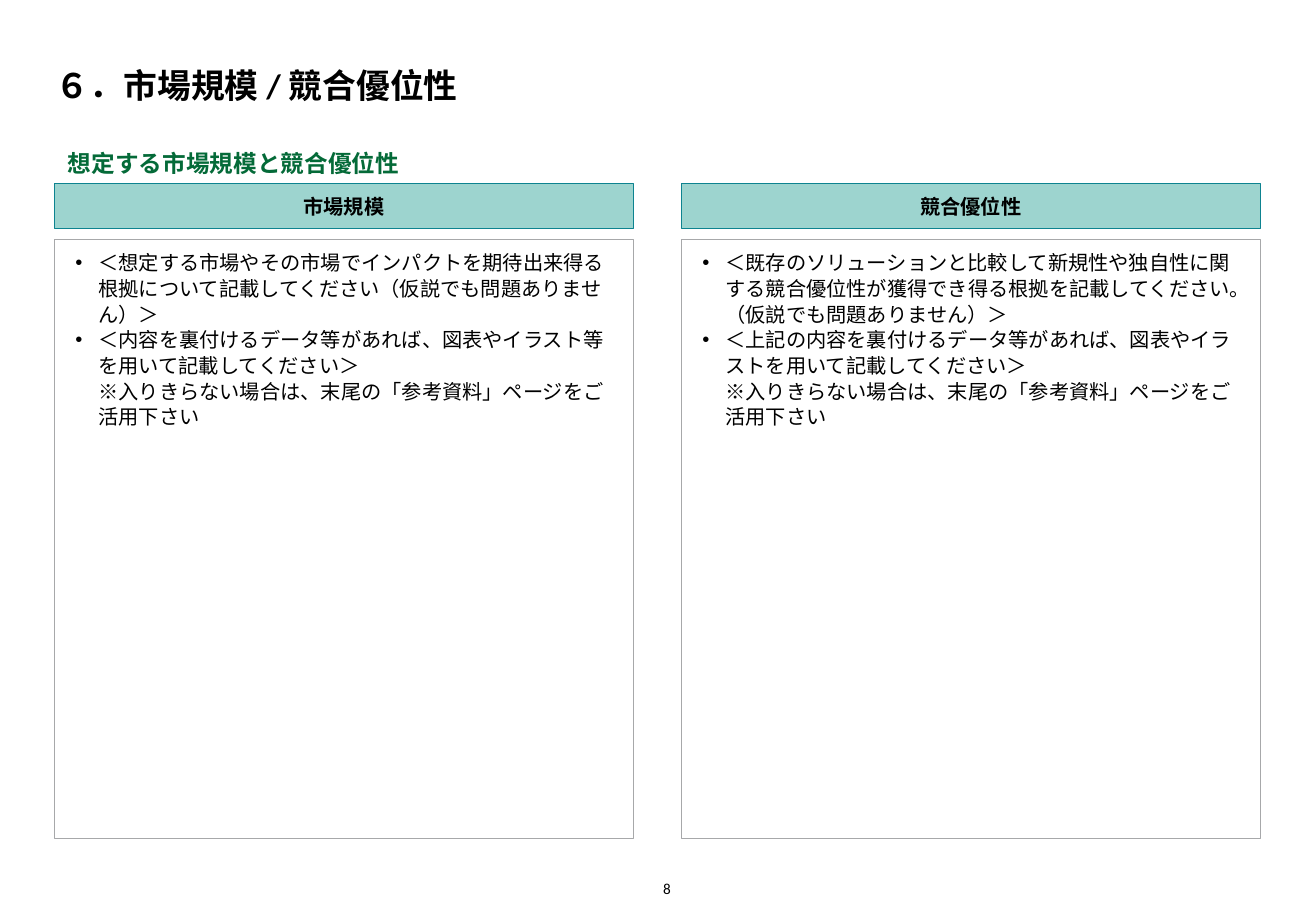
"""Build the market size and competitive advantage slide."""
import pptx
import pptx.dml.color
import pptx.enum.shapes
import pptx.enum.text
import pptx.oxml.ns
import pptx.util
from lxml import etree
from pptx.util import Inches

COLORS = {
    "black": "000000",
    "white": "FFFFFF",
    "green": "046A38",
    "header": "9DD4CF",
    "header_line": "0D8390",
    "panel_line": "A7A8AA",
}
ALIGN = pptx.enum.text.PP_ALIGN
ANCHOR = pptx.enum.text.MSO_ANCHOR
REFERENCE_NOTE = "※入りきらない場合は、末尾の「参考資料」ページをご活用下さい"
COLUMNS = [
    (0.45, "市場規模", [
        "＜想定する市場やその市場でインパクトを期待出来得る根拠について記載してください（仮説でも問題ありません）＞",
        "＜内容を裏付けるデータ等があれば、図表やイラスト等を用いて記載してください＞\n" + REFERENCE_NOTE,
    ]),
    (5.61, "競合優位性", [
        "＜既存のソリューションと比較して新規性や独自性に関する競合優位性が獲得でき得る根拠を記載してください。（仮説でも問題ありません）＞",
        "＜上記の内容を裏付けるデータ等があれば、図表やイラストを用いて記載してください＞\n" + REFERENCE_NOTE,
    ]),
]
COLUMN_WIDTH = 4.76


def rgb(name):
    return pptx.dml.color.RGBColor.from_string(COLORS[name])


def set_frame(shape, anchor, inset):
    frame = shape.text_frame
    frame.word_wrap = True
    frame.vertical_anchor = anchor
    frame.margin_left = frame.margin_right = Inches(inset)
    frame.margin_top = frame.margin_bottom = Inches(inset)
    return frame


def write(paragraph, text, size, font, color="black", bold=False, align=ALIGN.LEFT):
    paragraph.text = text
    paragraph.alignment = align
    for run in paragraph.runs:
        run.font.size = pptx.util.Pt(size)
        run.font.name = font
        run.font.bold = bold
        run.font.color.rgb = rgb(color)
    for line_break in paragraph._p.findall(pptx.oxml.ns.qn("a:br")):
        etree.SubElement(line_break, pptx.oxml.ns.qn("a:rPr"), sz=str(size * 100))


def add_label(slide, box, text, size, anchor, inset=0, **style):
    shape = slide.shapes.add_textbox(*map(Inches, box))
    frame = set_frame(shape, anchor, inset)
    write(frame.paragraphs[0], text, size, "Calibri", **style)


def add_box(slide, box, fill, line, anchor):
    shape = slide.shapes.add_shape(
        pptx.enum.shapes.MSO_SHAPE.RECTANGLE, *map(Inches, box))
    shape.shadow.inherit = False
    shape.fill.solid()
    shape.fill.fore_color.rgb = rgb(fill)
    shape.line.color.rgb = rgb(line)
    shape.line.width = pptx.util.Pt(0.5)
    return set_frame(shape, anchor, 0.08)


def add_bullet(paragraph):
    properties = paragraph._p.get_or_add_pPr()
    properties.set("marL", str(Inches(0.28)))
    properties.set("indent", str(Inches(-0.19)))
    etree.SubElement(properties, pptx.oxml.ns.qn("a:buFont"), typeface="Arial")
    etree.SubElement(properties, pptx.oxml.ns.qn("a:buChar"), char="•")


def add_column(slide, left, heading, items):
    panel = add_box(slide, (left, 1.97, COLUMN_WIDTH, 4.93),
                    "white", "panel_line", ANCHOR.TOP)
    for index, item in enumerate(items):
        paragraph = panel.add_paragraph() if index else panel.paragraphs[0]
        add_bullet(paragraph)
        paragraph.line_spacing = 1.06
        write(paragraph, item, 12, "Arial")
    header = add_box(slide, (left, 1.51, COLUMN_WIDTH, 0.37),
                     "header", "header_line", ANCHOR.MIDDLE)
    header.paragraphs[0].line_spacing = 1.06
    write(header.paragraphs[0], heading, 12, "Arial", bold=True, align=ALIGN.CENTER)


def main():
    presentation = pptx.Presentation()
    presentation.slide_width = Inches(10.83)
    presentation.slide_height = Inches(7.5)
    slide = presentation.slides.add_slide(presentation.slide_layouts[6])
    add_label(slide, (0.46, 0.2, 9.92, 0.67), "６．市場規模 / 競合優位性", 20,
              ANCHOR.BOTTOM, bold=True)
    for left, heading, items in COLUMNS:
        add_column(slide, left, heading, items)
    add_label(slide, (0.46, 1.11, COLUMN_WIDTH, 0.47), "想定する市場規模と競合優位性", 14,
              ANCHOR.MIDDLE, inset=0.1, color="green", bold=True)
    add_label(slide, (5.32, 7.2, 0.2, 0.19), "8", 9, ANCHOR.BOTTOM, align=ALIGN.RIGHT)
    presentation.save("out.pptx")


if __name__ == "__main__":
    main()
